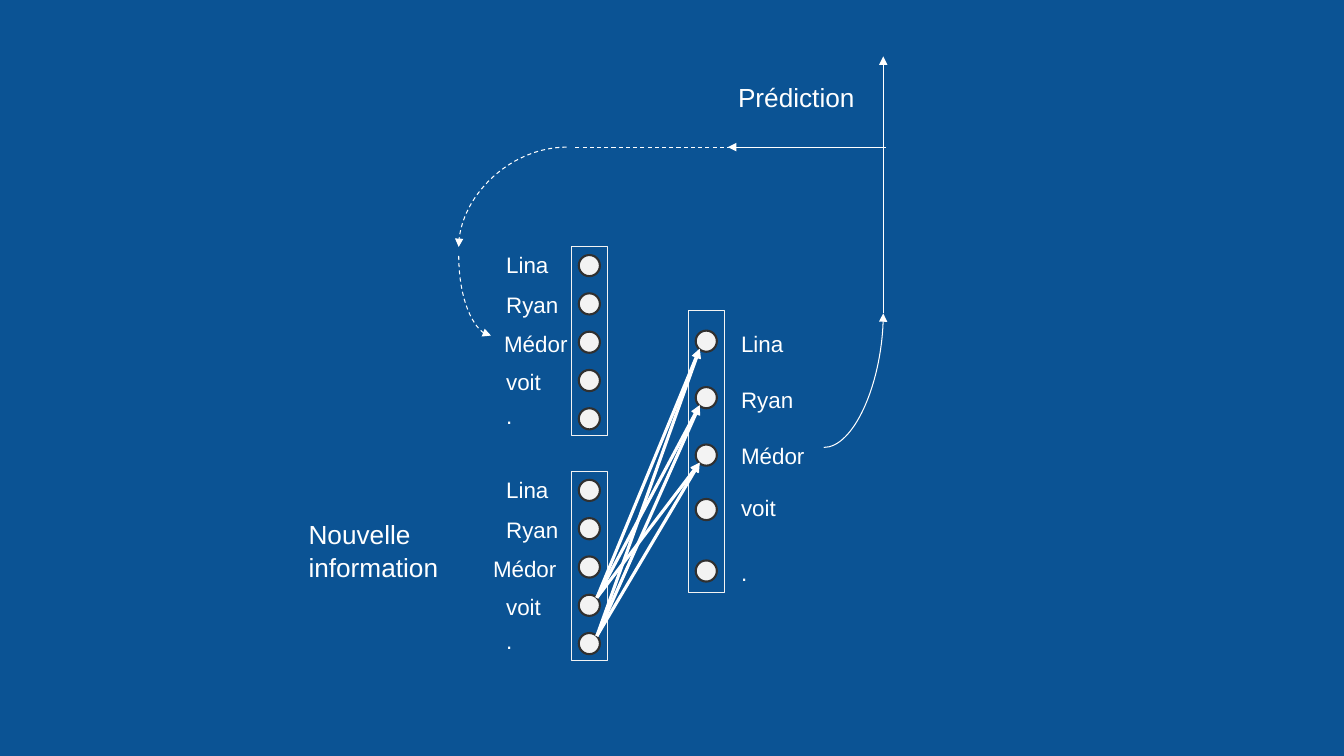
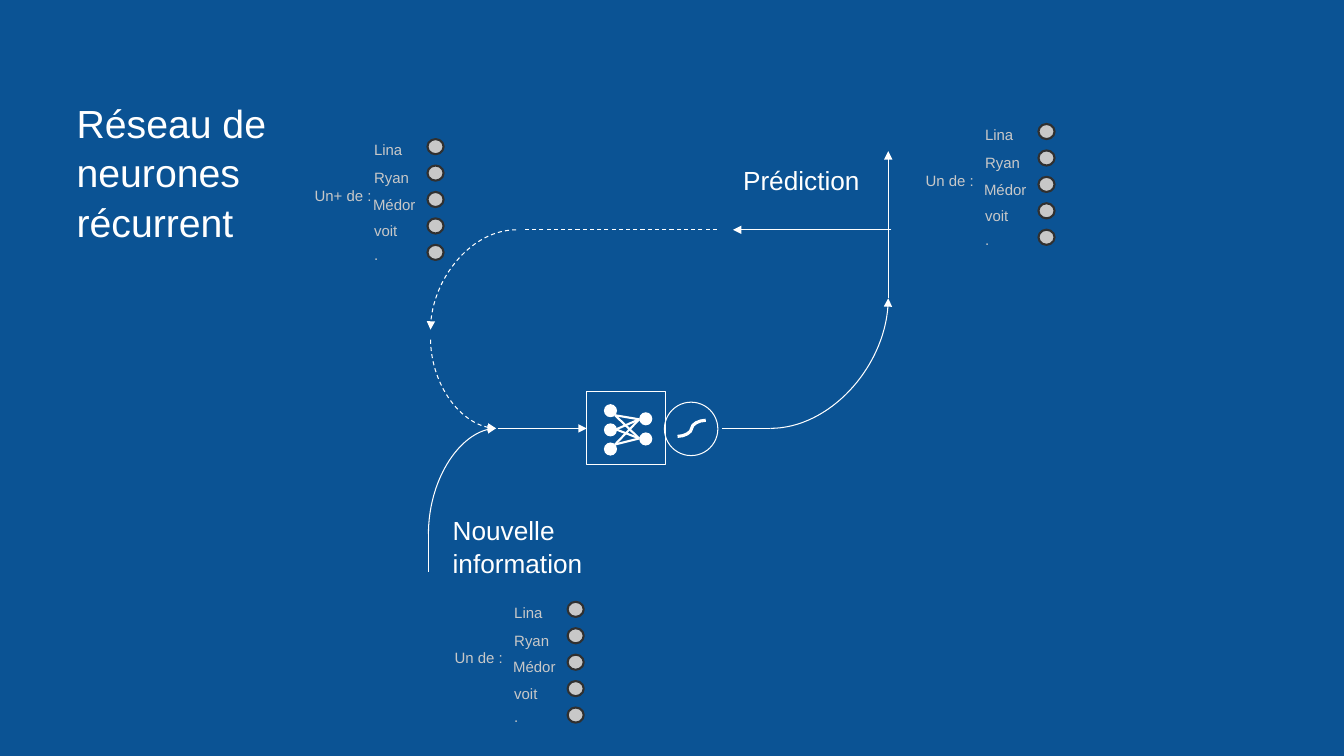
from dataclasses import dataclass
from itertools import product

from lxml import etree
from pptx import Presentation
from pptx.dml.color import RGBColor
from pptx.enum.dml import MSO_LINE
from pptx.enum.shapes import MSO_CONNECTOR, MSO_SHAPE
from pptx.enum.text import MSO_ANCHOR, MSO_AUTO_SIZE, PP_ALIGN
from pptx.oxml.ns import qn
from pptx.util import Inches, Pt

STRAIGHT, CURVE = MSO_CONNECTOR.STRAIGHT, MSO_CONNECTOR.CURVE
RECTANGLE, ELLIPSE = MSO_SHAPE.RECTANGLE, MSO_SHAPE.OVAL
DASH = MSO_LINE.DASH
TOP, LEFT, NO_FIT = MSO_ANCHOR.TOP, PP_ALIGN.LEFT, MSO_AUTO_SIZE.NONE
TITLE_ONLY, BLANK = 5, 6

WORDS = ("Lina", "Ryan", "Médor", "voit", ".")
LABEL_STEPS = (0, 0.4, 0.78, 1.16, 1.5)
DOT_STEP = 0.38
SMALL = 0.69


@dataclass(frozen=True)
class Theme:
    background: RGBColor = RGBColor(0x0B, 0x53, 0x94)
    white: RGBColor = RGBColor(0xFF, 0xFF, 0xFF)
    light: RGBColor = RGBColor(0xF3, 0xF3, 0xF3)
    muted: RGBColor = RGBColor(0xC8, 0xC8, 0xC8)
    outline: RGBColor = RGBColor(0x30, 0x30, 0x30)
    font: str = "Arial"
    title_size: float = 28
    heading_size: float = 18.7
    label_size: float = 16
    small_size: float = 10.7
    thin: float = 0.75
    medium: float = 1.5
    thick: float = 2.25
    inset: float = 0.13
    line_spacing: float = 1.05


class Deck:
    def __init__(self, theme):
        self.theme = theme
        self.presentation = Presentation()
        self.presentation.slide_width = Inches(13.33)
        self.presentation.slide_height = Inches(7.5)
        fill = self.presentation.slide_master.background.fill
        fill.solid()
        fill.fore_color.rgb = theme.background
        self.slide = None

    def new_slide(self, layout):
        self.slide = self.presentation.slides.add_slide(
            self.presentation.slide_layouts[layout])

    # Text
    def fill_text(self, shape, text, size, color):
        frame = shape.text_frame
        frame.word_wrap = True
        frame.auto_size = NO_FIT
        frame.vertical_anchor = TOP
        inset = Inches(self.theme.inset)
        frame.margin_left = frame.margin_right = inset
        frame.margin_top = frame.margin_bottom = inset
        paragraph = frame.paragraphs[0]
        paragraph.alignment = LEFT
        paragraph.line_spacing = self.theme.line_spacing
        run = paragraph.add_run()
        run.text = text
        run.font.name = self.theme.font
        run.font.size = Pt(size)
        run.font.color.rgb = color

    def title(self, text, left, top, width, height):
        shape = self.slide.shapes.title
        shape.left, shape.top = Inches(left), Inches(top)
        shape.width, shape.height = Inches(width), Inches(height)
        self.fill_text(shape, text, self.theme.title_size, self.theme.white)

    def text(self, text, left, top, width, height, size, color):
        box = self.slide.shapes.add_textbox(
            Inches(left), Inches(top), Inches(width), Inches(height))
        self.fill_text(box, text, size, color)

    def heading(self, text, left, top, width, height):
        self.text(text, left, top, width, height,
                  self.theme.heading_size, self.theme.white)

    # Shapes and lines
    def shape(self, kind, left, top, width, height,
              fill=None, line=None, weight=0.75):
        shape = self.slide.shapes.add_shape(
            kind, Inches(left), Inches(top), Inches(width), Inches(height))
        shape.shadow.inherit = False
        if fill is None:
            shape.fill.background()
        else:
            shape.fill.solid()
            shape.fill.fore_color.rgb = fill
        if line is None:
            shape.line.fill.background()
        else:
            shape.line.color.rgb = line
            shape.line.width = Pt(weight)

    def line(self, start, end, weight=None, arrow=None, dashed=False,
             kind=STRAIGHT):
        """Draw a connector; arrow is "headEnd" (start) or "tailEnd" (end)."""
        connector = self.slide.shapes.add_connector(
            kind, *(Inches(value) for value in (*start, *end)))
        connector.line.color.rgb = self.theme.white
        connector.line.width = Pt(weight or self.theme.thin)
        if dashed:
            connector.line.dash_style = DASH
        properties = connector._element.spPr
        if arrow:
            etree.SubElement(properties.find(qn("a:ln")), qn(f"a:{arrow}"),
                             type="triangle")
        etree.SubElement(properties, qn("a:effectLst"))
        return connector

    def arrow(self, start, end, weight=None):
        self.line(start, end, weight, "tailEnd")

    def arc(self, start, end, arrow="tailEnd", dashed=False):
        """Draw a quarter turn that leaves start horizontally."""
        connector = self.line(start, end, None, arrow, dashed, CURVE)
        geometry = connector._element.spPr.find(qn("a:prstGeom"))
        geometry.set("prst", "curvedConnector2")

    # Diagram parts
    def dot(self, left, top, width, height, fill):
        self.shape(ELLIPSE, left, top, width, height, fill,
                   self.theme.outline, self.theme.medium)

    def labels(self, left, tops, size, color, width, indent=0):
        """Add the words; indent moves the longest word, Médor."""
        for word, top in zip(WORDS, tops):
            shift = indent if word == "Médor" else 0
            self.text(word, left + shift, top, width, 0.4, size, color)

    def column(self, left, top, height, dot_tops):
        self.shape(RECTANGLE, left, top, 0.36, height, line=self.theme.light)
        for dot_top in dot_tops:
            self.dot(left + 0.07, dot_top, 0.21, 0.21, self.theme.light)

    def input_column(self, top, indent):
        dot_tops = [top + 0.08 + i * DOT_STEP for i in range(len(WORDS))]
        self.column(5.67, top, 1.87, dot_tops)
        self.labels(4.89, [top - 0.1 + step for step in LABEL_STEPS],
                    self.theme.label_size, self.theme.white, 1.02, indent)

    def small_list(self, caption, left, top):
        """Draw a captioned word list with one dot per word."""
        size, color = self.theme.small_size, self.theme.muted
        for i in range(len(WORDS)):
            self.dot(left + 1.25, top + 0.12 + i * DOT_STEP * SMALL,
                     0.16, 0.15, color)
        self.labels(left + 0.59, [top + step * SMALL for step in LABEL_STEPS],
                    size, color, 0.75, -0.01)
        self.text(caption, left, top + 0.45, 0.95, 0.59, size, color)

    def feedback_loop(self, start, x, bend, top, level, dash_start, back, end):
        """Rise from start to the prediction, then return at level to end."""
        self.arc(start, (x, bend))
        self.arrow((x, bend), (x, top))
        self.arrow((x + 0.03, level), (x - 1.54, level))
        self.line((dash_start, level), (dash_start - 1.91, level), dashed=True)
        self.arc((dash_start - 1.99, level), (back, level + 0.99), dashed=True)
        self.arc(end, (back, level + 1.07), "headEnd", dashed=True)
        self.heading("Prédiction", x - 1.57, level - 0.8, 1.5, 0.59)

    def network_icon(self):
        white, weight = self.theme.white, self.theme.medium
        for left, tops in ((5.99, (4.01, 4.2, 4.39)), (6.34, (4.09, 4.29))):
            for top in tops:
                self.shape(ELLIPSE, left, top, 0.13, 0.13, white)
        inputs = ((6.1, 4.12), (6.11, 4.26), (6.1, 4.41))
        outputs = ((6.34, 4.16), (6.34, 4.35))
        for start, end in product(inputs, outputs):
            self.line(start, end, weight)
        self.shape(RECTANGLE, 5.82, 3.88, 0.78, 0.73, line=white)

    def activation_icon(self):
        self.shape(ELLIPSE, 6.59, 3.99, 0.53, 0.53, line=self.theme.white)
        self.line((6.72, 4.33), (7, 4.17), self.theme.thick, kind=CURVE)


def build_connections(deck):
    theme = deck.theme
    deck.new_slide(BLANK)

    # Previous prediction, new information and output
    deck.input_column(2.45, -0.02)
    deck.input_column(4.68, -0.13)
    deck.column(6.83, 3.08, 2.8, (3.28, 3.84, 4.41, 4.95, 5.56))
    deck.labels(7.22, (3.13, 3.69, 4.24, 4.76, 5.4),
                theme.label_size, theme.white, 1.02)

    # Weighted connections
    for source, target in product((5.93, 6.31), (3.46, 4.02, 4.59)):
        deck.arrow((5.92, source), (6.94, target), theme.thick)

    # Feedback
    deck.feedback_loop(start=(8.17, 4.44), x=8.76, bend=3.11, top=0.56,
                       level=1.46, dash_start=7.61, back=4.55,
                       end=(4.87, 3.33))
    deck.heading("Nouvelle information", 2.93, 5, 2.25, 0.74)


def build_recurrent_network(deck):
    deck.new_slide(TITLE_ONLY)
    deck.title("Réseau de neurones récurrent", 0.63, 0.83, 3.11, 2.86)

    # Network and its activation
    deck.network_icon()
    deck.activation_icon()

    # Input and feedback paths
    deck.arrow((4.94, 4.25), (5.82, 4.25))
    deck.line((7.16, 4.25), (7.64, 4.25))
    deck.feedback_loop(start=(7.64, 4.25), x=8.81, bend=2.96, top=1.5,
                       level=2.28, dash_start=7.11, back=4.27,
                       end=(4.92, 4.25))
    deck.arc((4.92, 4.25), (4.25, 5.3), "headEnd")
    deck.line((4.25, 5.29), (4.25, 5.67))
    deck.heading("Nouvelle information", 4.36, 4.96, 1.6, 1.05)

    # Word lists
    for caption, left, top in (("Un de :", 9.05, 1.11),
                               ("Un de :", 4.38, 5.85),
                               ("Un+ de :", 2.99, 1.26)):
        # The longer caption starts further left
        deck.small_list(caption, left, top)


def main():
    deck = Deck(Theme())
    build_connections(deck)
    build_recurrent_network(deck)
    deck.presentation.save("out.pptx")


if __name__ == "__main__":
    main()
